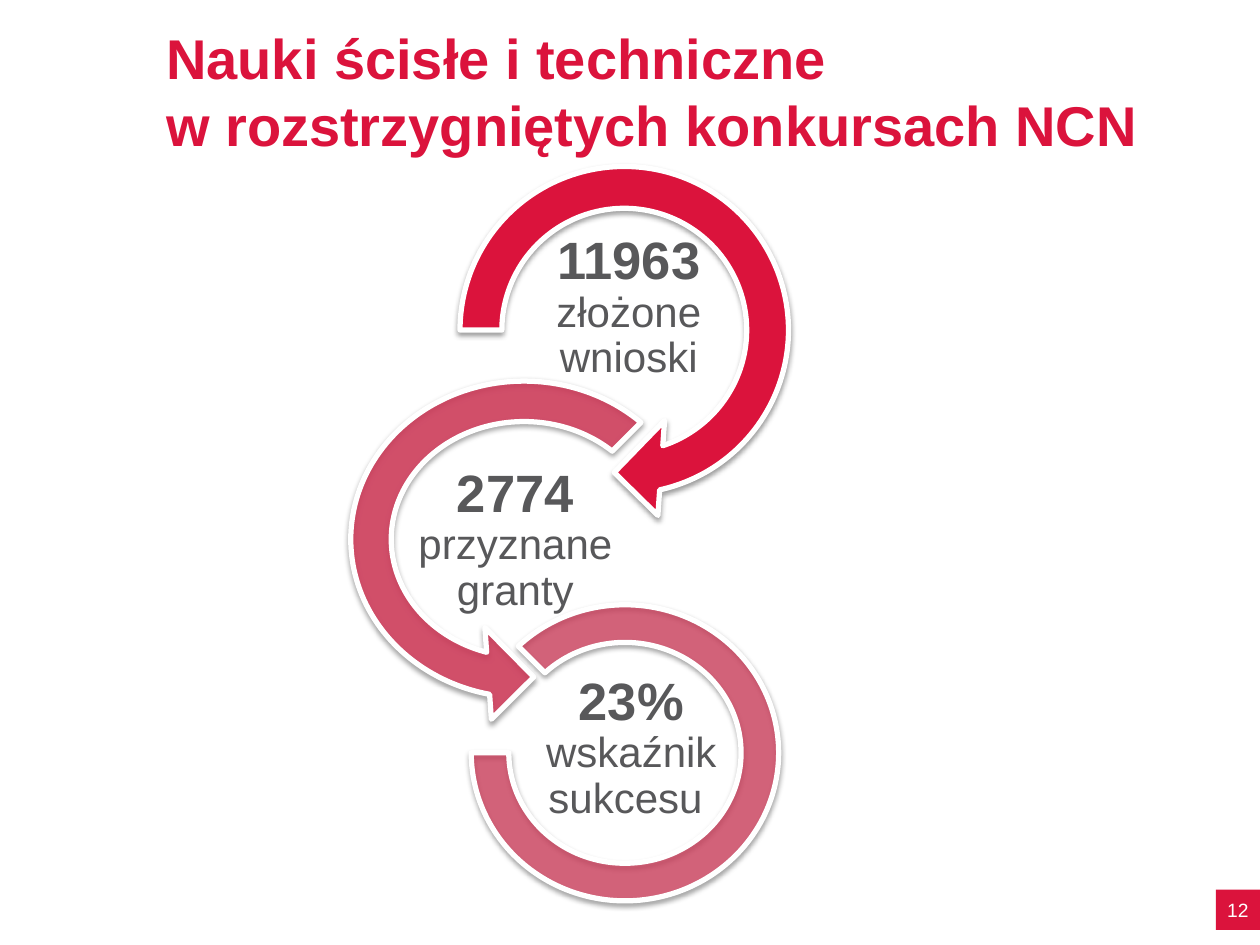
import dataclasses

import lxml.etree
import pptx
import pptx.dml.color
import pptx.enum.shapes
import pptx.enum.text
import pptx.oxml.ns
import pptx.util

SHAPES = pptx.enum.shapes.MSO_SHAPE
ALIGN = pptx.enum.text.PP_ALIGN
ANCHOR = pptx.enum.text.MSO_ANCHOR
COLUMNS, ROWS = 100, 75
SLIDE_WIDTH, SLIDE_HEIGHT = pptx.util.Inches(10), pptx.util.Inches(7.5)


@dataclasses.dataclass(frozen=True)
class Theme:
    """Colours and type sizes of the slide."""

    font: str = "Arial"
    red: str = "DB133C"
    grey: str = "58585A"
    white: str = "FFFFFF"
    title: int = 32
    figure: int = 30
    caption: int = 24
    page: int = 11
    outline: int = 3


THEME = Theme()


def color(value):
    """Return an RGB colour from its hex value."""
    return pptx.dml.color.RGBColor.from_string(value)


def place(left, top, width, height):
    """Convert grid columns and rows to slide lengths."""
    column, row = SLIDE_WIDTH / COLUMNS, SLIDE_HEIGHT / ROWS
    return [round(length) for length in (left * column, top * row, width * column, height * row)]


def add_element(parent, tag, **attributes):
    """Append a drawing element with the given attributes."""
    return lxml.etree.SubElement(parent, pptx.oxml.ns.qn(tag), attributes)


def set_insets(frame, inset):
    """Give all four sides of a text frame the same inset."""
    frame.margin_left = frame.margin_right = inset
    frame.margin_top = frame.margin_bottom = inset


def style_font(font, value, size=None, bold=None):
    """Set typeface, colour, size and weight."""
    font.name = THEME.font
    font.color.rgb = color(value)
    font.size = pptx.util.Pt(size) if size else None
    font.bold = bold


def add_title(slide, text, box):
    """Add the slide heading."""
    frame = slide.shapes.add_textbox(*place(*box)).text_frame
    frame.word_wrap = True
    frame.vertical_anchor = ANCHOR.BOTTOM
    paragraph = frame.paragraphs[0]
    paragraph.text = text
    style_font(paragraph.font, THEME.red, THEME.title, True)


def add_page_number(slide, number, box):
    """Add the red page number tile."""
    shape = slide.shapes.add_shape(SHAPES.RECTANGLE, *place(*box))
    shape.shadow.inherit = False
    shape.fill.solid()
    shape.fill.fore_color.rgb = color(THEME.red)
    shape.line.fill.background()
    frame = shape.text_frame
    frame.word_wrap = False
    frame.vertical_anchor = ANCHOR.MIDDLE
    set_insets(frame, 0)
    paragraph = frame.paragraphs[0]
    paragraph.text = number
    paragraph.alignment = ALIGN.CENTER
    style_font(paragraph.font, THEME.white, THEME.page)


def add_ring(group, preset, box, adjustments, opacity):
    """Add a white-edged ring with a soft shadow below."""
    shape = group.shapes.add_shape(preset, *place(*box))
    for index, value in enumerate(adjustments):
        shape.adjustments[index] = value
    shape.fill.solid()
    shape.fill.fore_color.rgb = color(THEME.red)
    if opacity < 100:
        fill = shape.element.spPr.find(pptx.oxml.ns.qn("a:solidFill"))
        add_element(fill[0], "a:alpha", val=str(opacity * 1000))
    shape.line.color.rgb = color(THEME.white)
    shape.line.width = pptx.util.Pt(THEME.outline)
    shape.shadow.inherit = False
    effects = shape.element.spPr.find(pptx.oxml.ns.qn("a:effectLst"))
    shadow = add_element(
        effects, "a:outerShdw", blurRad=str(pptx.util.Pt(3.1)),
        dist=str(pptx.util.Pt(1.6)), dir="5400000", rotWithShape="0")
    add_element(add_element(shadow, "a:srgbClr", val="000000"), "a:alpha", val="38000")


def add_label(group, figure, caption, box):
    """Add a bold figure with its caption."""
    frame = group.shapes.add_textbox(*place(*box)).text_frame
    frame.word_wrap = True
    frame.vertical_anchor = ANCHOR.MIDDLE
    set_insets(frame, pptx.util.Inches(0.02))
    paragraph = frame.paragraphs[0]
    paragraph.alignment = ALIGN.CENTER
    paragraph.line_spacing = 0.9
    style_font(paragraph.font, THEME.grey)
    for text, size, bold in ((figure, THEME.figure, True), (caption, THEME.caption, False)):
        run = paragraph.add_run()
        run.text = text.rstrip("\v")
        run.font.size = pptx.util.Pt(size)
        run.font.bold = bold
        if text.endswith("\v"):
            paragraph.add_line_break()


def main():
    """Build and save the slide."""
    presentation = pptx.Presentation()
    presentation.slide_width, presentation.slide_height = SLIDE_WIDTH, SLIDE_HEIGHT
    slide = presentation.slides.add_slide(presentation.slide_layouts[6])
    add_title(slide, "Nauki ścisłe i techniczne\vw rozstrzygniętych konkursach NCN",
              (12.2, 0.7, 82.8, 12.3))
    add_page_number(slide, "12", (96.5, 70.6, 3.5, 3.2))
    steps = (
        (SHAPES.CIRCULAR_ARROW, (34.4, 11.1, 30.3, 30.2), (0.11, 11.42, 45, 108, 0.125), 100,
         "11963 ", "złożone wnioski", (42, 19.6, 15.8, 9.7)),
        (SHAPES.LEFT_CIRCULAR_ARROW, (25.8, 28.2, 31.6, 29.2), (0.11, 11.42, 63, 189, 0.125), 65,
         "2774 ", "przyznane granty", (31.3, 35.9, 19.2, 14)),
        (SHAPES.BLOCK_ARC, (37.4, 48, 24.4, 23.5), (135, 108, 0.127), 56,
         "23%\v", "wskaźnik sukcesu ", (42.2, 52.7, 15.8, 13.4)),
    )
    group = slide.shapes.add_group_shape()
    for preset, ring_box, adjustments, opacity, figure, caption, label_box in steps:
        add_ring(group, preset, ring_box, adjustments, opacity)
        add_label(group, figure, caption, label_box)
    presentation.save("out.pptx")


if __name__ == "__main__":
    main()
